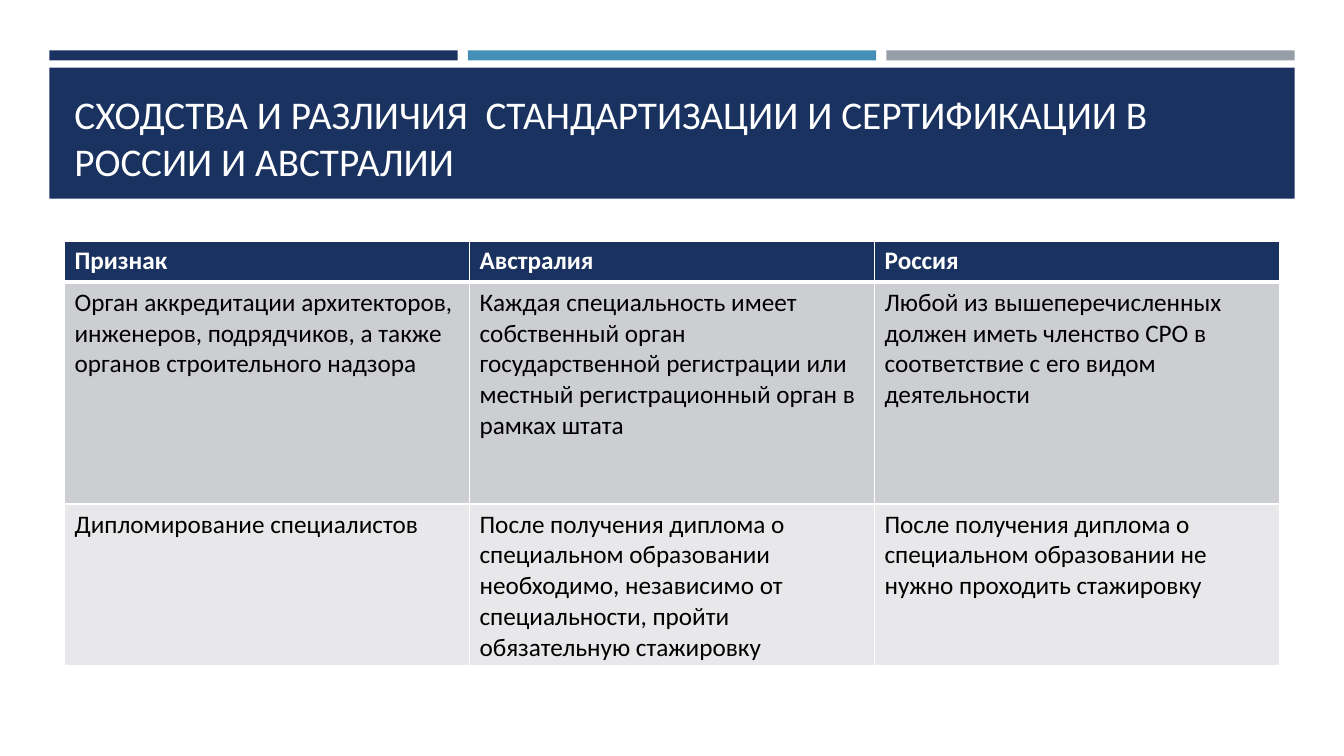
from lxml.etree import SubElement
from pptx import Presentation
from pptx.dml.color import RGBColor
from pptx.enum.shapes import MSO_SHAPE
from pptx.enum.text import MSO_ANCHOR
from pptx.oxml.ns import qn
from pptx.util import Inches, Pt

NAVY = RGBColor(0x1A, 0x32, 0x60)
BLUE = RGBColor(0x45, 0x90, 0xB8)
GRAY = RGBColor(0x96, 0x9F, 0xA7)
BAND_DARK = RGBColor(0xCD, 0xCE, 0xD2)
BAND_LIGHT = RGBColor(0xE8, 0xE8, 0xEA)
WHITE = RGBColor(0xFF, 0xFF, 0xFF)
BLACK = RGBColor(0, 0, 0)

TITLE = "СХОДСТВА И РАЗЛИЧИЯ  СТАНДАРТИЗАЦИИ И СЕРТИФИКАЦИИ В РОССИИ И АВСТРАЛИИ"
ROWS = [
    ("Признак", "Австралия", "Россия"),
    ("Орган аккредитации архитекторов, инженеров, подрядчиков, а также "
     "органов строительного надзора",
     "Каждая специальность имеет собственный орган государственной "
     "регистрации или местный регистрационный орган в рамках штата",
     "Любой из вышеперечисленных должен иметь членство СРО в соответствие "
     "с его видом деятельности"),
    ("Дипломирование специалистов",
     "После получения диплома о специальном образовании необходимо, "
     "независимо от специальности, пройти обязательную стажировку",
     "После получения диплома о специальном образовании не нужно проходить "
     "стажировку"),
]
ROW_HEIGHTS = [4.1, 22, 16]  # in grid rows
ROW_FILLS = [NAVY, BAND_DARK, BAND_LIGHT]


class Deck:
    """Three columns with gaps across, 75 rows down; lengths are grid units."""
    FONT = "Calibri"
    MARGIN, COLUMN, GAP = Inches(0.49), Inches(4.05), Inches(0.1)
    ROW, INSET = Inches(0.1), Inches(0.15)

    def __init__(self):
        self.prs = Presentation()
        self.prs.slide_width, self.prs.slide_height = Inches(13.33), Inches(7.5)
        self.s = self.prs.slides.add_slide(self.prs.slide_layouts[6])

    def area(self, col, row, span, rows, inset=0):
        left = self.MARGIN + col * (self.COLUMN + self.GAP) + inset
        width = span * self.COLUMN + (span - 1) * self.GAP - 2 * inset
        return left, int(row * self.ROW), width, int(rows * self.ROW)

    def style(self, p, size, color, bold=False):
        p.font.name, p.font.size = self.FONT, Pt(size)
        p.font.color.rgb, p.font.bold = color, bold

    def bar(self, col, row, span, rows, color):
        sp = self.s.shapes.add_shape(MSO_SHAPE.RECTANGLE,
                                     *self.area(col, row, span, rows))
        sp.shadow.inherit = False
        sp.fill.solid()
        sp.fill.fore_color.rgb = color
        sp.line.fill.background()

    def title(self, text, row, rows):
        sp = self.s.shapes.add_textbox(*self.area(0, row, 3, rows, self.INSET))
        tf = sp.text_frame
        tf.word_wrap, tf.vertical_anchor = True, MSO_ANCHOR.BOTTOM
        tf.text = text
        self.style(tf.paragraphs[0], 28, WHITE)

    def border(self, cell, side, width):
        tc_pr = cell._tc.get_or_add_tcPr()
        ln = SubElement(tc_pr, qn(f"a:ln{side}"), w=str(Pt(width)))
        fill = SubElement(ln, qn("a:solidFill"))
        SubElement(fill, qn("a:srgbClr"), val=str(WHITE))

    def table(self, rows, row, heights, fills):
        area = self.area(0, row, 3, sum(heights), self.INSET)
        table = self.s.shapes.add_table(len(rows), len(rows[0]), *area).table
        for i, texts in enumerate(rows):
            table.rows[i].height = int(heights[i] * self.ROW)
            header = i == 0
            for j, text in enumerate(texts):
                cell = table.cell(i, j)
                cell.text = text
                self.style(cell.text_frame.paragraphs[0], 18,
                           WHITE if header else BLACK, header)
                widths = {"L": 1, "R": 1, "T": 3 if i == 1 else 1,
                          "B": 3 if header else 1}
                for side, width in widths.items():
                    self.border(cell, side, width)
                cell.fill.solid()
                cell.fill.fore_color.rgb = fills[i]


def main():
    deck = Deck()
    for col, color in enumerate((NAVY, BLUE, GRAY)):
        deck.bar(col, 5, 1, 1, color)
    deck.bar(0, 6.7, 3, 13, NAVY)
    deck.title(TITLE, 7.7, 11.1)
    deck.table(ROWS, 23.9, ROW_HEIGHTS, ROW_FILLS)
    deck.prs.save("out.pptx")


if __name__ == "__main__":
    main()
